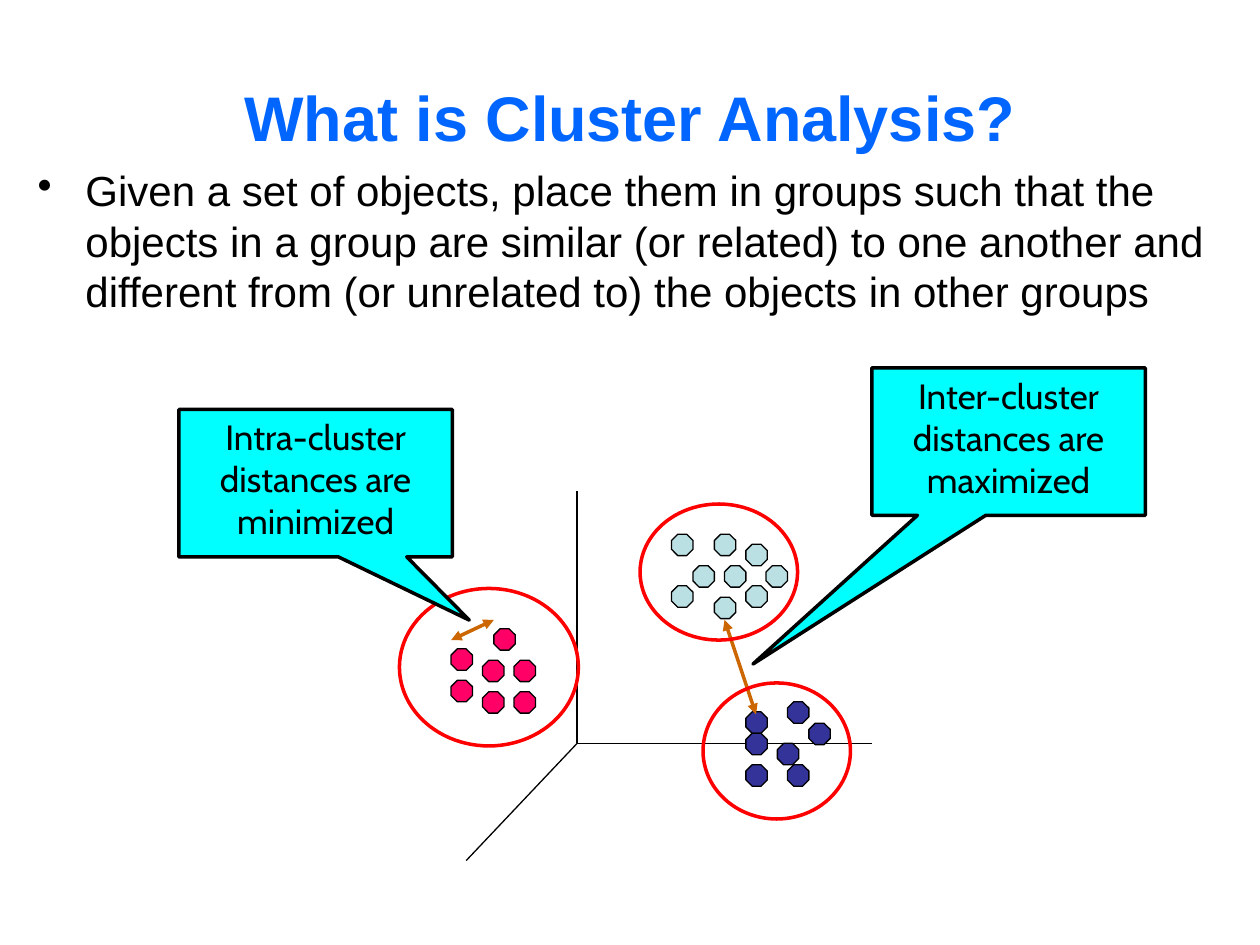
from typing import NamedTuple

from lxml.etree import SubElement
from pptx import Presentation
from pptx.dml.color import RGBColor
from pptx.enum.shapes import MSO_CONNECTOR, MSO_SHAPE
from pptx.enum.text import MSO_ANCHOR, PP_ALIGN
from pptx.oxml.ns import qn
from pptx.util import Inches, Pt

BLACK = RGBColor(0x00, 0x00, 0x00)
TITLE_BLUE = RGBColor(0x00, 0x66, 0xFF)
CYAN = RGBColor(0x00, 0xFF, 0xFF)
RED = RGBColor(0xFF, 0x00, 0x00)
ORANGE = RGBColor(0xCC, 0x66, 0x00)
PALE_BLUE = RGBColor(0xBB, 0xE0, 0xE3)
PINK = RGBColor(0xFF, 0x00, 0x66)
NAVY = RGBColor(0x33, 0x33, 0x99)

POINT_SIZE = 0.17
THIN, THICK = 0.75, 2


class Box(NamedTuple):
    left: float
    top: float
    width: float
    height: float


class Cluster(NamedTuple):
    color: RGBColor
    outline: Box
    points: list[tuple[float, float]]


class Callout(NamedTuple):
    text: str
    box: Box
    tip: tuple[float, float]


class Line(NamedTuple):
    start: tuple[float, float]
    end: tuple[float, float]


CLUSTERS = [
    Cluster(PINK, Box(3.17, 4.67, 1.42, 1.25), [
        (3.58, 5.15), (3.83, 5.24), (3.83, 5.49), (4.08, 5.24),
        (3.92, 4.99), (4.08, 5.49), (3.58, 5.4)]),
    Cluster(PALE_BLUE, Box(5.08, 4, 1.25, 1.08), [
        (5.5, 4.49), (5.75, 4.49), (5.67, 4.24), (5.67, 4.74), (6.08, 4.49),
        (5.92, 4.32), (5.33, 4.24), (5.92, 4.65), (5.33, 4.65)]),
    Cluster(NAVY, Box(5.58, 5.42, 1.17, 1.08), [
        (5.92, 5.65), (6.42, 5.74), (6.17, 5.9), (5.92, 6.07),
        (6.25, 6.07), (5.92, 5.82), (6.25, 5.57)]),
]
ORIGIN = (4.58, 5.9)
AXES = [Line(ORIGIN, end) for end in ((4.58, 3.9), (6.92, 5.9), (3.7, 6.83))]
INTER_DISTANCE = Line((6, 5.67), (5.75, 4.92))
INTRA_DISTANCE = Line((3.58, 5.08), (3.92, 4.92))
INTER_CALLOUT = Callout("Inter-cluster distances are maximized",
                        Box(6.92, 2.92, 2.17, 1.17), (-0.935, 1.509))
INTRA_CALLOUT = Callout("Intra-cluster distances are minimized",
                        Box(1.42, 3.25, 2.17, 1.17), (0.562, 0.929))


def inches(box: Box) -> list[int]:
    return [Inches(value) for value in box]


def add_outlined(slide, kind, box: Box, fill, color: RGBColor, width: float):
    """Add a preset shape; a fill of None leaves it hollow."""
    shape = slide.shapes.add_shape(kind, *inches(box))
    shape.shadow.inherit = False
    if fill is None:
        shape.fill.background()
    else:
        shape.fill.solid()
        shape.fill.fore_color.rgb = fill
    shape.line.color.rgb = color
    shape.line.width = Pt(width)
    return shape


def add_line(slide, line: Line, color: RGBColor, width: float, arrows: bool = False) -> None:
    connector = slide.shapes.add_connector(
        MSO_CONNECTOR.STRAIGHT, *inches((*line.start, *line.end)))
    connector.line.color.rgb = color
    connector.line.width = Pt(width)
    properties = connector._element.spPr
    if arrows:
        outline = properties.find(qn("a:ln"))
        for end in ("a:headEnd", "a:tailEnd"):
            SubElement(outline, qn(end), type="triangle")
    SubElement(properties, qn("a:effectLst"))


def add_points(slide, cluster: Cluster) -> None:
    for left, top in cluster.points:
        add_outlined(slide, MSO_SHAPE.OCTAGON, Box(left, top, POINT_SIZE, POINT_SIZE),
                     cluster.color, BLACK, THIN)


def add_callout(slide, callout: Callout) -> None:
    shape = add_outlined(slide, MSO_SHAPE.RECTANGULAR_CALLOUT, callout.box, CYAN, BLACK, THICK)
    shape.adjustments[0], shape.adjustments[1] = callout.tip
    frame = shape.text_frame
    frame.vertical_anchor = MSO_ANCHOR.TOP
    frame.text = callout.text
    paragraph = frame.paragraphs[0]
    paragraph.alignment = PP_ALIGN.CENTER
    format_font(paragraph, "Cabin", 20, BLACK)


def format_font(paragraph, name: str, size: float, color: RGBColor) -> None:
    paragraph.font.name = name
    paragraph.font.size = Pt(size)
    paragraph.font.color.rgb = color


def add_title(slide) -> None:
    title = slide.shapes.title
    title.left, title.top, title.width, title.height = inches(Box(0.5, 0.3, 9, 1.25))
    title.text_frame.text = "What is Cluster Analysis?"
    title.text_frame.vertical_anchor = MSO_ANCHOR.MIDDLE
    paragraph = title.text_frame.paragraphs[0]
    paragraph.alignment = PP_ALIGN.CENTER
    paragraph.font.bold = True
    format_font(paragraph, "Arial", 36, TITLE_BLUE)


def add_definition(slide) -> None:
    frame = slide.shapes.add_textbox(*inches(Box(0.2, 1.26, 9.55, 1.41))).text_frame
    frame.word_wrap = True
    frame.text = ("Given a set of objects, place them in groups such that the objects "
                  "in a group are similar (or related) to one another and different "
                  "from (or unrelated to) the objects in other groups")
    paragraph = frame.paragraphs[0]
    format_font(paragraph, "Arial", 24, BLACK)
    properties = paragraph._p.get_or_add_pPr()
    properties.set("marL", str(Inches(0.38)))
    properties.set("indent", str(-Inches(0.38)))
    bullet = properties.makeelement(qn("a:buChar"), {"char": "•"})
    properties.insert_element_before(bullet, "a:tabLst", "a:defRPr", "a:extLst")


def main() -> None:
    presentation = Presentation()
    presentation.slide_width, presentation.slide_height = Inches(10), Inches(7.5)
    slide = presentation.slides.add_slide(presentation.slide_layouts[5])
    add_title(slide)
    add_definition(slide)
    for axis in AXES:
        add_line(slide, axis, BLACK, THIN)
    for cluster in CLUSTERS:
        add_points(slide, cluster)
    add_line(slide, INTER_DISTANCE, ORANGE, THICK, arrows=True)
    add_callout(slide, INTER_CALLOUT)
    for cluster in CLUSTERS:
        add_outlined(slide, MSO_SHAPE.OVAL, cluster.outline, None, RED, THICK)
    add_line(slide, INTRA_DISTANCE, ORANGE, THICK, arrows=True)
    add_callout(slide, INTRA_CALLOUT)
    presentation.save("out.pptx")


if __name__ == "__main__":
    main()
